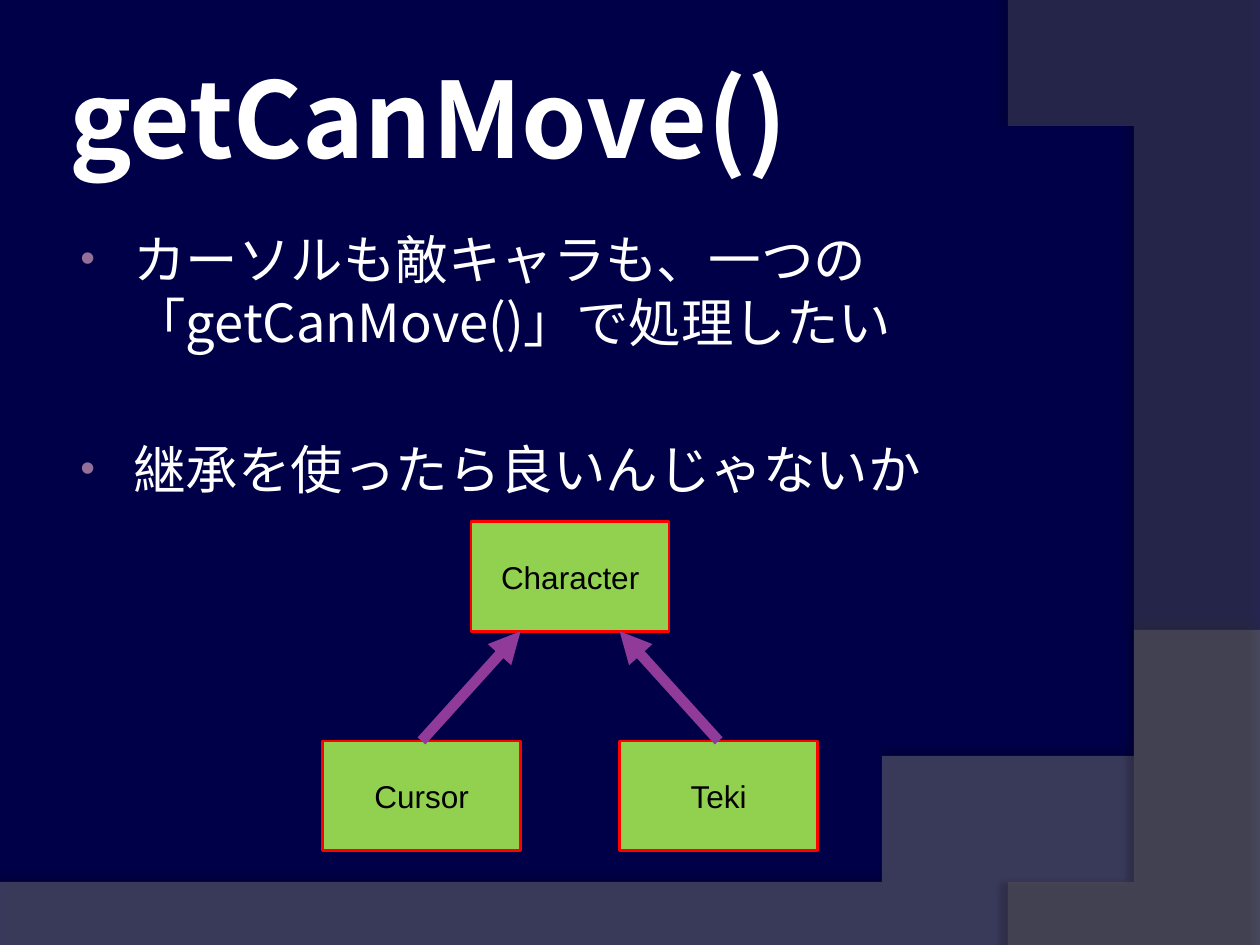
import pptx
import pptx.dml.color
import pptx.enum.shapes
import pptx.enum.text
import pptx.oxml
import pptx.oxml.ns
import pptx.util
from pptx.util import Inches

TEXT_FONT = "Noto Sans CJK JP"
WHITE = "FFFFFF"


def color(value):
    return pptx.dml.color.RGBColor.from_string(value)


def add_xml(parent, markup):
    """Append a DrawingML element written without its namespace."""
    namespace = pptx.oxml.ns.nsdecls("a")
    tag, rest = markup.split(" ", 1)
    element = pptx.oxml.parse_xml(f"{tag} {namespace} {rest}")
    parent.append(element)


def add_run(paragraph, text, size, font_name, font_color, bold=False):
    run = paragraph.add_run()
    run.text = text
    run.font.size = pptx.util.Pt(size)
    run.font.name = font_name
    run.font.bold = bold
    run.font.color.rgb = color(font_color)
    add_xml(run.font._element, f'<a:ea typeface="{font_name}"/>')


def curve(start, control_1, control_2, end, steps=40):
    """Points along a cubic curve, both ends included."""
    points = []
    for step in range(steps + 1):
        t = step / steps
        weights = ((1 - t) ** 3, 3 * t * (1 - t) ** 2, 3 * t * t * (1 - t), t ** 3)
        nodes = (start, control_1, control_2, end)
        points.append(tuple(sum(w * node[axis] for w, node in zip(weights, nodes))
                            for axis in (0, 1)))
    return points


def add_swoosh(slide, points, fill, opacity, shadow_opacity, shadow_angle):
    builder = slide.shapes.build_freeform(*points[0], scale=Inches(1))
    builder.add_line_segments(points[1:], close=True)
    shape = builder.convert_to_shape()
    shape.fill.solid()
    shape.fill.fore_color.rgb = color(fill)
    fill_color = shape._element.spPr.find(".//" + pptx.oxml.ns.qn("a:srgbClr"))
    add_xml(fill_color, f'<a:alpha val="{opacity * 1000}"/>')
    shape.line.fill.background()
    add_xml(shape._element.spPr, f"""<a:effectLst >
        <a:outerShdw blurRad="{pptx.util.Pt(4)}" dist="{pptx.util.Pt(4)}"
            dir="{shadow_angle * 60000}" algn="ctr" rotWithShape="0">
          <a:srgbClr val="000000"><a:alpha val="{shadow_opacity * 1000}"/></a:srgbClr>
        </a:outerShdw></a:effectLst>""")


def add_background(slide, width, height):
    slide.background.fill.solid()
    slide.background.fill.fore_color.rgb = color("000049")
    # Rising band along the bottom
    bottom = curve((width, 5.2), (5.59, 7.29), (3.91, 7.19), (0, 7.05))
    add_swoosh(slide, [(0, height), (width, height)] + bottom,
               "7F7F7F", 45, 35, 270)
    # Bulging band along the right
    right = curve((8.21, height), (9.35, 6.19), (10.18, 3), (8, 0))
    add_swoosh(slide, [(width, 0.02), (width, height)] + right,
               "5E5E5E", 40, 45, 180)


def add_text_box(slide, left, top, width, height):
    shape = slide.shapes.add_textbox(
        Inches(left), Inches(top), Inches(width), Inches(height))
    shape.text_frame.word_wrap = True
    return shape.text_frame


def add_title(slide, left, top, width, height):
    frame = add_text_box(slide, left, top, width, height)
    frame.margin_left = frame.margin_right = Inches(0.05)
    frame.vertical_anchor = pptx.enum.text.MSO_ANCHOR.MIDDLE
    add_run(frame.paragraphs[0], "getCanMove()", 60, TEXT_FONT, WHITE, bold=True)


def add_bullets(slide, left, top, width, height):
    frame = add_text_box(slide, left, top, width, height)
    items = (("カーソルも敵キャラも、一つの「getCanMove()」で処理したい", 6),
             ("継承を使ったら良いんじゃないか", 48))
    for index, (text, space_before) in enumerate(items):
        paragraph = frame.add_paragraph() if index else frame.paragraphs[0]
        paragraph.line_spacing = pptx.util.Pt(36)
        paragraph.space_before = pptx.util.Pt(space_before)
        properties = paragraph._p.get_or_add_pPr()
        properties.set("marL", str(Inches(0.46)))
        properties.set("indent", str(Inches(-0.42)))
        add_xml(properties, '<a:buClr ><a:srgbClr val="947098"/></a:buClr>')
        add_xml(properties, '<a:buSzPct val="80000"/>')
        add_xml(properties, '<a:buFont typeface="Arial"/>')
        add_xml(properties, '<a:buChar char="•"/>')
        add_run(paragraph, text, 30, TEXT_FONT, WHITE)


def add_class_box(slide, name, left, top, width, height):
    shape = slide.shapes.add_shape(
        pptx.enum.shapes.MSO_SHAPE.RECTANGLE,
        Inches(left), Inches(top), Inches(width), Inches(height))
    shape.shadow.inherit = False
    shape.fill.solid()
    shape.fill.fore_color.rgb = color("92D050")
    shape.line.color.rgb = color("FF0000")
    shape.line.width = pptx.util.Pt(1.5)
    shape.text_frame.vertical_anchor = pptx.enum.text.MSO_ANCHOR.MIDDLE
    paragraph = shape.text_frame.paragraphs[0]
    paragraph.alignment = pptx.enum.text.PP_ALIGN.CENTER
    add_run(paragraph, name, 18, "Arial", "000000")
    return shape


def add_inheritance_arrow(slide, child, end_x, end_y):
    arrow = slide.shapes.add_connector(
        pptx.enum.shapes.MSO_CONNECTOR.STRAIGHT,
        child.left + child.width // 2, child.top, end_x, end_y)
    arrow.begin_connect(child, 0)
    arrow.line.color.rgb = color("903A9A")
    arrow.line.width = pptx.util.Pt(6)
    add_xml(arrow.line._get_or_add_ln(), '<a:tailEnd type="triangle"/>')
    add_xml(arrow._element.spPr, "<a:effectLst />")


def add_class_diagram(slide, left, top, width, height):
    # Boxes are two fifths of the width; children stand half a box apart
    box_width, box_height = width / 2.5, height / 3
    child_top = top + 2 * box_height
    children = [
        add_class_box(slide, name, left + index * 1.5 * box_width, child_top,
                      box_width, box_height)
        for index, name in enumerate(("Cursor", "Teki"))]
    parent = add_class_box(slide, "Character", left + 0.75 * box_width, top,
                           box_width, box_height)
    # Arrows meet the parent a quarter of its width from each corner
    for child, share in zip(children, (0.25, 0.75)):
        add_inheritance_arrow(slide, child, parent.left + int(share * parent.width),
                              parent.top + parent.height)


def main():
    presentation = pptx.Presentation()
    presentation.slide_width = Inches(10)
    presentation.slide_height = Inches(7.5)
    slide = presentation.slides.add_slide(presentation.slide_layouts[6])
    add_background(slide, 10, 7.5)
    add_title(slide, 0.5, 0.3, 8.17, 1.25)
    add_bullets(slide, 0.5, 1.75, 8.17, 4.95)
    add_class_diagram(slide, 2.56, 4.14, 3.93, 2.61)
    presentation.save("out.pptx")


if __name__ == "__main__":
    main()
